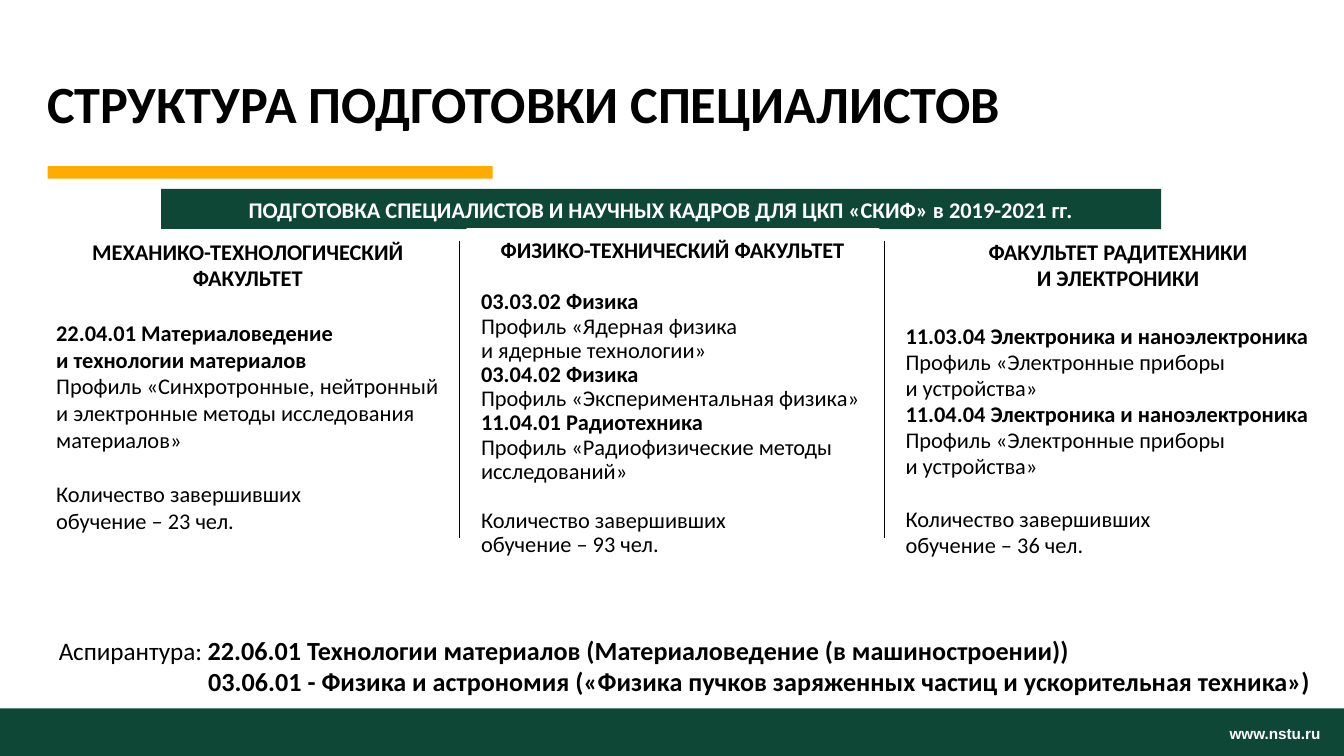
from lxml import etree
from pptx import Presentation
from pptx.dml.color import RGBColor
from pptx.enum.shapes import MSO_CONNECTOR, MSO_SHAPE
from pptx.enum.text import MSO_ANCHOR, PP_ALIGN
from pptx.oxml.ns import qn
from pptx.util import Pt

RECT = MSO_SHAPE.RECTANGLE
STRAIGHT = MSO_CONNECTOR.STRAIGHT
TOP, MIDDLE = MSO_ANCHOR.TOP, MSO_ANCHOR.MIDDLE
LEFT, CENTER = PP_ALIGN.LEFT, PP_ALIGN.CENTER
C = {"green": "0F4736", "amber": "FFAB00", "white": "FFFFFF", "black": "000000"}


def add_run(p, text, size, bold=False, color="black", font="Calibri"):
    r = p.add_run()
    r.text = text
    r.font.name = font
    r.font.size = Pt(size)
    r.font.bold = bold
    r.font.color.rgb = RGBColor.from_string(C[color])


def add_rect(x, y, w, h, fill=None):
    """Add a rectangle: filled without outline, or unfilled with a white one."""
    sp = s.shapes.add_shape(RECT, Pt(x), Pt(y), Pt(w), Pt(h))
    sp.shadow.inherit = False
    if fill:
        sp.fill.solid()
        sp.fill.fore_color.rgb = RGBColor.from_string(C[fill])
        sp.line.fill.background()
    else:
        sp.fill.background()
        sp.line.color.rgb = RGBColor.from_string(C["white"])
        sp.line.width = Pt(2.25)
    return sp


prs = Presentation()
prs.slide_width, prs.slide_height = Pt(720), Pt(405)
s = prs.slides.add_slide(prs.slide_layouts[5])

# Footer
add_rect(0, 379.5, 720, 25.5, "green")
url = s.shapes.add_textbox(Pt(658.8), Pt(388), Pt(50.4), Pt(9))
tf = url.text_frame
tf.word_wrap = False
tf.margin_left = tf.margin_right = tf.margin_top = tf.margin_bottom = 0
add_run(tf.paragraphs[0], "www.nstu.ru", 8.2, True, "white", "Arial")

# Title
title = s.shapes.title
title.left, title.top, title.width, title.height = Pt(18), Pt(21), Pt(682.5), Pt(67.5)
title.text_frame.vertical_anchor = MIDDLE
p = title.text_frame.paragraphs[0]
p.alignment = LEFT
add_run(p, "СТРУКТУРА ПОДГОТОВКИ СПЕЦИАЛИСТОВ", 28, True)
add_rect(25.5, 89, 238.5, 6.75, "amber")

# Banner
banner = add_rect(86.4, 101.25, 535.7, 21.6, "green")
banner.text_frame.vertical_anchor = MIDDLE
p = banner.text_frame.paragraphs[0]
p.alignment = CENTER
add_run(p, "ПОДГОТОВКА СПЕЦИАЛИСТОВ И НАУЧНЫХ КАДРОВ ДЛЯ ЦКП «СКИФ» в 2019-2021 гг.",
        12, True, "white")

# Faculties: box, line spacing, gap below heading, gap above total,
# heading lines, programme lines (text, bold), total
faculties = [
    ((23, 123.8, 219.6, 167), 1, 14.65, 14.65,
     ["МЕХАНИКО-ТЕХНОЛОГИЧЕСКИЙ ФАКУЛЬТЕТ"],
     [("22.04.01 Материаловедение", True),
      ("и технологии материалов", True),
      ("Профиль «Синхротронные, нейтронный и электронные методы исследования материалов»",
       False)],
     "обучение – 23 чел."),
    ((250.6, 123.1, 219.6, 208), 0.9, 14.65, 13.2,
     ["ФИЗИКО-ТЕХНИЧЕСКИЙ ФАКУЛЬТЕТ"],
     [("03.03.02 Физика", True),
      ("Профиль «Ядерная физика", False),
      ("и ядерные технологии»", False),
      ("03.04.02 Физика", True),
      ("Профиль «Экспериментальная физика»", False),
      ("11.04.01 Радиотехника", True),
      ("Профиль «Радиофизические методы исследований»", False)],
     "обучение – 93 чел."),
    ((478, 123.8, 242, 213), 0.97, 17.1, 14.2,
     ["ФАКУЛЬТЕТ РАДИТЕХНИКИ", "И ЭЛЕКТРОНИКИ"],
     [("11.03.04 Электроника и наноэлектроника", True),
      ("Профиль «Электронные приборы", False),
      ("и устройства»", False),
      ("11.04.04 Электроника и наноэлектроника", True),
      ("Профиль «Электронные приборы", False),
      ("и устройства»", False)],
     "обучение – 36 чел."),
]
for box, spacing, heading_gap, total_gap, heading, programmes, total in faculties:
    if box is faculties[-1][0]:
        sp = s.shapes.add_textbox(*map(Pt, box))
    else:
        sp = add_rect(*box)
    tf = sp.text_frame
    tf.word_wrap = True
    tf.vertical_anchor = TOP
    lines = [(text, True) for text in heading] + programmes
    lines += [("Количество завершивших", False), (total, False)]
    for i, (text, bold) in enumerate(lines):
        p = tf.paragraphs[0] if i == 0 else tf.add_paragraph()
        p.alignment = CENTER if i < len(heading) else LEFT
        if i >= len(heading):
            p.line_spacing = spacing
        if i == len(heading):
            p.space_before = Pt(heading_gap)
        elif i == len(lines) - 2:
            p.space_before = Pt(total_gap)
        add_run(p, text, 12, bold)

# Column dividers
for x in (246.3, 474):
    divider = s.shapes.add_connector(STRAIGHT, Pt(x), Pt(129.4), Pt(x), Pt(288))
    divider.line.color.rgb = RGBColor.from_string(C["black"])
    divider.line.width = Pt(0.5)
    etree.SubElement(divider._element.spPr, qn("a:effectLst"))

# Postgraduate programmes
postgraduate = s.shapes.add_textbox(Pt(24.5), Pt(336.4), Pt(695.5), Pt(42))
tf = postgraduate.text_frame
tf.word_wrap = True
p = tf.paragraphs[0]
add_run(p, "Аспирантура: ", 13.5)
add_run(p, "22.06.01 Технологии материалов (Материаловедение (в машиностроении))", 14, True)
p = tf.add_paragraph()
p._p.get_or_add_pPr().set("marL", str(Pt(80)))
add_run(p, "03.06.01 - Физика и астрономия («Физика пучков заряженных частиц "
        "и ускорительная техника»)", 14, True)

prs.save("out.pptx")
